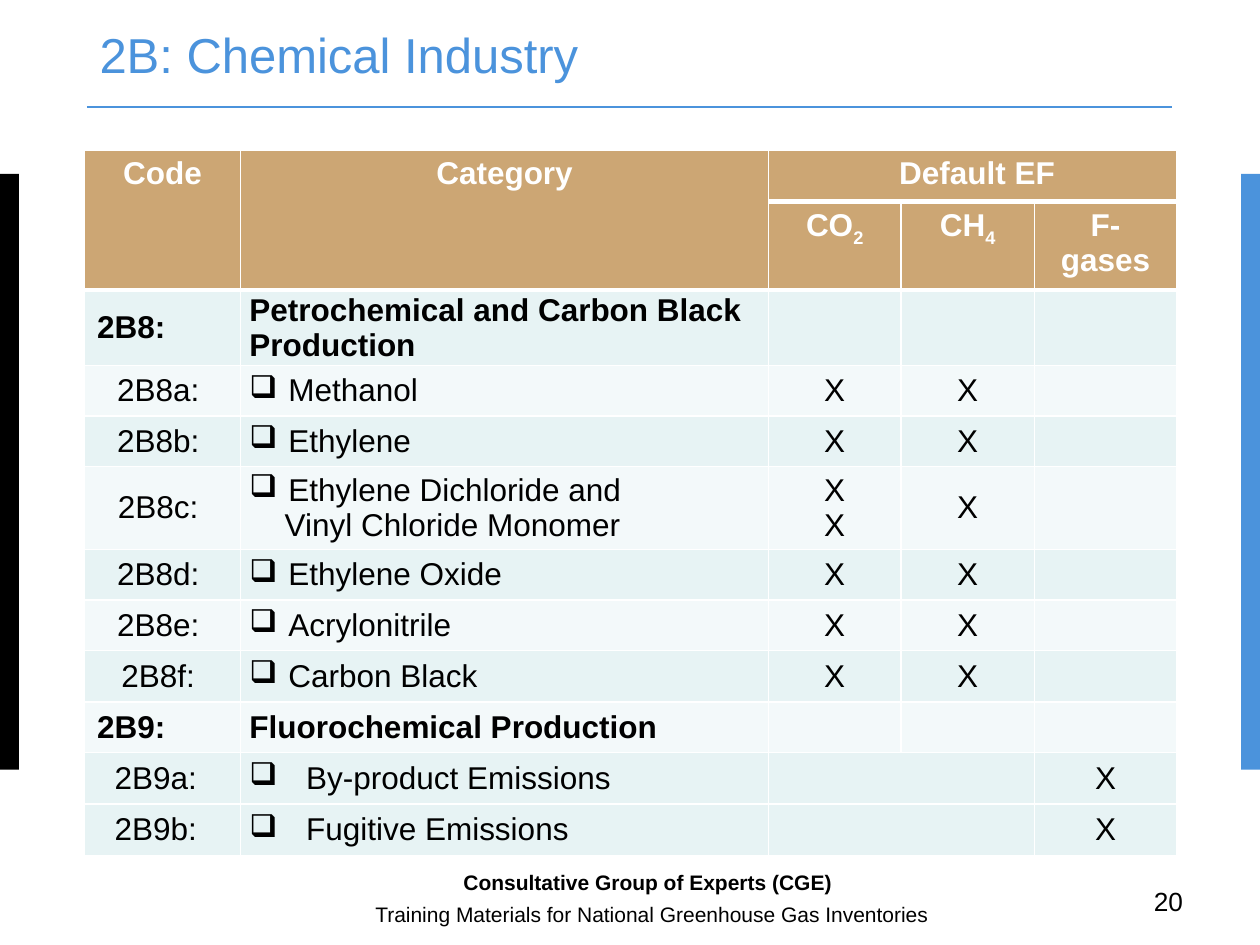
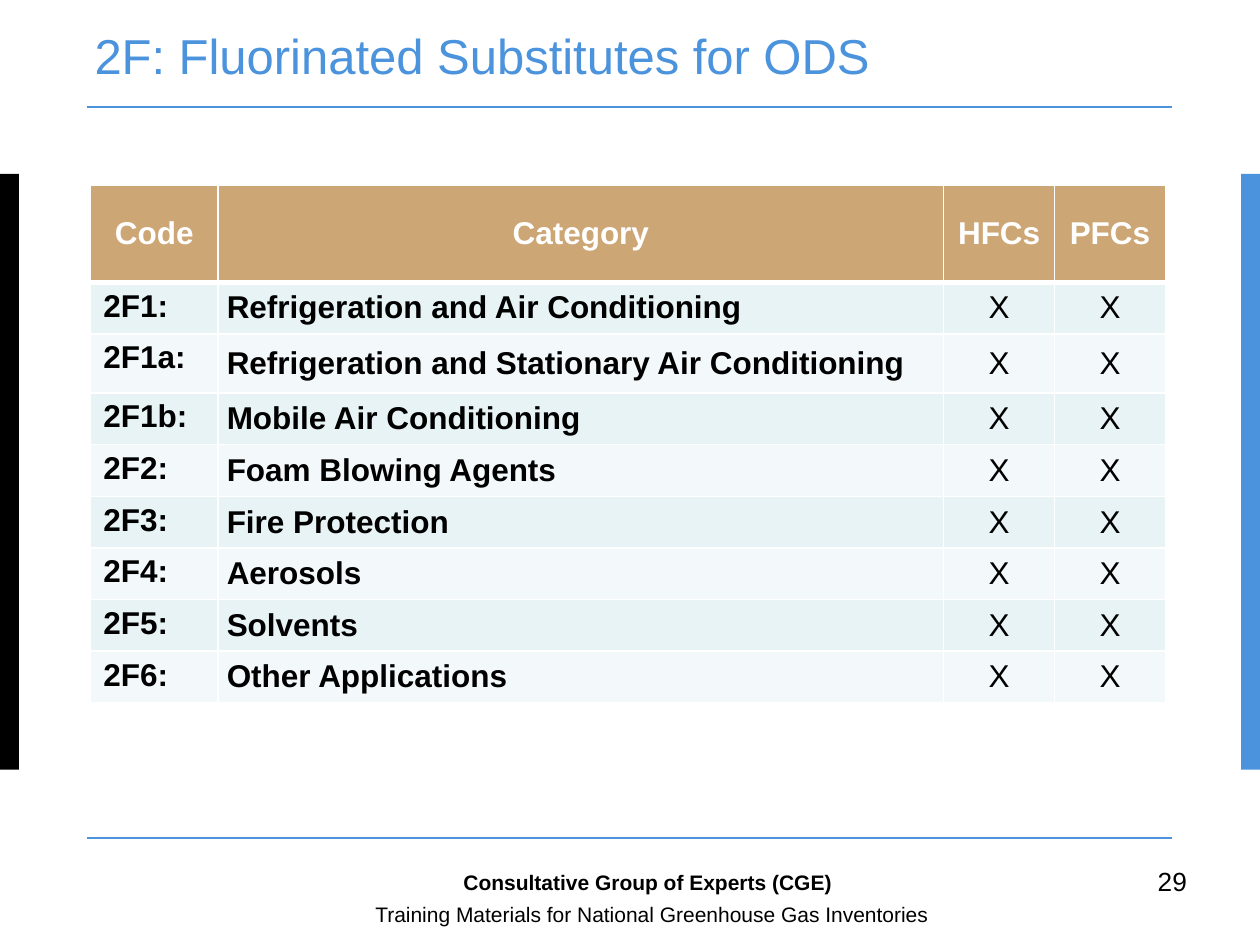
from lxml import etree
from pptx import Presentation
from pptx.dml.color import RGBColor
from pptx.enum.shapes import MSO_CONNECTOR, MSO_SHAPE
from pptx.enum.text import MSO_ANCHOR, PP_ALIGN
from pptx.oxml.ns import qn
from pptx.util import Inches, Pt

RECT, STRAIGHT = MSO_SHAPE.RECTANGLE, MSO_CONNECTOR.STRAIGHT
TOP, MIDDLE = MSO_ANCHOR.TOP, MSO_ANCHOR.MIDDLE
LEFT, CENTER = PP_ALIGN.LEFT, PP_ALIGN.CENTER

FONT = "Arial"
BLACK, WHITE, BLUE, TAN = "000000", "FFFFFF", "4B93DC", "CCA674"
BANDS = ["E7F3F4", "F3F9FA"]
WIDE, TIGHT = (0.1, 0.05, 0.1, 0.05), (0.07, 0, 0.07, 0)  # left, top, right, bottom

SIDE_BARS = [(0, BLACK), (9.85, BLUE)]
RULES = [0.85, 6.65]
FOOTERS = [  # text, box, bold
    ("Training Materials for National Greenhouse Gas Inventories", (2.88, 7.11, 5.72, 0.2), False),
    ("Consultative Group of Experts (CGE)", (3.58, 6.85, 3.39, 0.27), True),
]

CHEMICAL = {
    "title": "2B: Chemical Industry", "title_box": (0.79, 0.28, 8.66, 0.55),
    "number": "20", "number_box": (9.06, 6.98, 0.47, 0.35),
    "left": 0.67, "top": 1.19,
    "cols": [1.24, 4.19, 1.05, 1.06, 1.13],
    "heights": [0.41, 0.66, 0.56, 0.4, 0.38, 0.66, 0.4, 0.38, 0.41, 0.38, 0.41, 0.41],
    "header_anchor": TOP,
    "header": [["Code", "Category", "Default EF", "", ""],
               ["", "", "CO_2", "CH_4", "F-gases"]],
    "merges": [(0, 0, 1, 0), (0, 1, 1, 1), (0, 2, 0, 4), (10, 2, 10, 3), (11, 2, 11, 3)],
    "rows": [
        ("2B8:", "Petrochemical and Carbon Black Production", "", "", ""),
        ("2B8a:", "Methanol", "X", "X", ""),
        ("2B8b:", "Ethylene", "X", "X", ""),
        ("2B8c:", "Ethylene Dichloride and\nVinyl Chloride Monomer", "X\nX", "X", ""),
        ("2B8d:", "Ethylene Oxide", "X", "X", ""),
        ("2B8e:", "Acrylonitrile", "X", "X", ""),
        ("2B8f:", "Carbon Black", "X", "X", ""),
        ("2B9:", "Fluorochemical Production", "", "", ""),
        ("2B9a:", "By-product Emissions", "", "", "X"),
        ("2B9b:", "Fugitive Emissions", "", "", "X"),
    ],
    "bands": [0, 1, 0, 1, 0, 1, 0, 1, 0, 0],
}
SUBSTITUTES = {
    "title": "2F: Fluorinated Substitutes for ODS", "title_box": (0.75, 0.21, 8.51, 0.71),
    "number": "29", "number_box": (9.09, 6.82, 0.47, 0.35),
    "left": 0.72, "top": 1.47,
    "cols": [1.01, 5.76, 0.88, 0.88],
    "heights": [0.77, 0.41, 0.47] + [0.41] * 6,
    "header_anchor": MIDDLE,
    "header": [["Code", "Category", "HFCs", "PFCs"]],
    "merges": [],
    "rows": [(code, category, "X", "X") for code, category in [
        ("2F1:", "Refrigeration and Air Conditioning"),
        ("2F1a:", "Refrigeration and Stationary Air Conditioning"),
        ("2F1b:", "Mobile Air Conditioning"),
        ("2F2:", "Foam Blowing Agents"),
        ("2F3:", "Fire Protection"),
        ("2F4:", "Aerosols"),
        ("2F5:", "Solvents"),
        ("2F6:", "Other Applications"),
    ]],
    "bands": [0, 1] * 4,
}


def rgb(color):
    return RGBColor.from_string(color)


def write(tf, text, size=18, color=BLACK, bold=False, align=LEFT, spacing=None, hang=0):
    """Fill a text frame; "_" starts a subscript, hang gives the first line a bullet."""
    for i, line in enumerate(text.split("\n")):
        p = tf.paragraphs[0] if i == 0 else tf.add_paragraph()
        p.alignment = align
        if spacing:
            p.line_spacing = Pt(spacing)
        if hang:
            pPr = p._p.get_or_add_pPr()
            pPr.set("marL", str(Inches(0.28 if i else hang)))
            pPr.set("indent", str(0 if i else -Inches(hang)))
            if i == 0:
                etree.SubElement(pPr, qn("a:buChar")).set("char", "❑")
        for j, part in enumerate(line.split("_")):
            r = p.add_run()
            r.text = part
            r.font.name, r.font.size, r.font.bold = FONT, Pt(size), bold
            r.font.color.rgb = rgb(color)
            if j:
                r.font._element.set("baseline", "-25000")


def add_text(s, box, text, inset=WIDE, anchor=TOP, **fmt):
    tf = s.shapes.add_textbox(*map(Inches, box)).text_frame
    tf.word_wrap = True
    tf.vertical_anchor = anchor
    tf.margin_left, tf.margin_top, tf.margin_right, tf.margin_bottom = map(Inches, inset)
    write(tf, text, **fmt)


def add_frame(s):
    """Draw the side bars and rules."""
    for x, color in SIDE_BARS:
        sp = s.shapes.add_shape(RECT, *map(Inches, (x, 1.38, 0.15, 4.73)))
        sp.shadow.inherit = False
        sp.fill.solid()
        sp.fill.fore_color.rgb = rgb(color)
        sp.line.fill.background()
    for y in RULES:
        rule = s.shapes.add_connector(STRAIGHT, *map(Inches, (0.69, y, 9.3, y)))
        rule.line.color.rgb = rgb(BLUE)
        rule.line.width = Pt(1)
        etree.SubElement(rule._element.spPr, qn("a:effectLst"))


def style_cell(cell, fill, inset, anchor, top, bottom):
    """Set fill, margins and white borders; top and bottom are border widths."""
    cell.fill.solid()
    cell.fill.fore_color.rgb = rgb(fill)
    cell.vertical_anchor = anchor
    cell.margin_left, cell.margin_top, cell.margin_right, cell.margin_bottom = map(Inches, inset)
    tcPr = cell._tc.get_or_add_tcPr()
    for i, (side, width) in enumerate([("L", 1), ("R", 1), ("T", top), ("B", bottom)]):
        ln = etree.Element(qn("a:ln" + side), w=str(Pt(width)))
        line_fill = etree.SubElement(ln, qn("a:solidFill"))
        etree.SubElement(line_fill, qn("a:srgbClr")).set("val", WHITE)
        tcPr.insert(i, ln)


def header_format(text, anchor):
    inset = {"Default EF": (0.17, 0.05, 0.1, 0.05), "F-gases": (0.13, 0.05, 0.13, 0.05)}
    return inset.get(text, WIDE), anchor, dict(color=WHITE, bold=True, align=CENTER)


def body_format(code, column):
    """Return inset, anchor and text format of a body cell."""
    item = code.startswith("2B") and len(code) == 5
    byproduct = code in ("2B9a:", "2B9b:")
    if column == 0:
        if byproduct:
            return (0.24, 0.05, 0.1, 0.05), MIDDLE, {}
        if item:
            return (0.1, 0.05, 0.17, 0.05), MIDDLE, dict(align=CENTER)
        return WIDE, TOP if code.startswith("2F") else MIDDLE, dict(bold=True)
    if column == 1:
        hang = (0.45 if byproduct else 0.31) if item else 0
        return TIGHT, MIDDLE, dict(bold=not item, hang=hang)
    return TIGHT, MIDDLE, dict(align=CENTER)


def add_category_table(s, data):
    rows = data["header"] + data["rows"]
    heads = len(data["header"])
    size = sum(data["cols"]), sum(data["heights"])
    table = s.shapes.add_table(len(rows), len(data["cols"]), Inches(data["left"]),
                               Inches(data["top"]), *map(Inches, size)).table
    for column, width in zip(table.columns, data["cols"]):
        column.width = Inches(width)
    for row, height in zip(table.rows, data["heights"]):
        row.height = Inches(height)
    for r1, c1, r2, c2 in data["merges"]:
        table.cell(r1, c1).merge(table.cell(r2, c2))
    for i, row in enumerate(rows):
        is_head = i < heads
        fill = TAN if is_head else BANDS[data["bands"][i - heads]]
        top = 3 if 0 < i <= heads else 1
        bottom = 3 if is_head else 1
        for j, text in enumerate(row):
            cell = table.cell(i, j)
            inset, anchor, fmt = (header_format(text, data["header_anchor"]) if is_head
                                  else body_format(row[0], j))
            style_cell(cell, fill, inset, anchor, top, bottom)
            if text:
                write(cell.text_frame, text, **fmt)


def add_slide(prs, data):
    s = prs.slides.add_slide(prs.slide_layouts[6])
    add_frame(s)
    add_text(s, data["title_box"], data["title"], inset=(0, 0, 0, 0), anchor=MIDDLE,
             size=28, color=BLUE, spacing=15)
    add_category_table(s, data)
    add_text(s, data["number_box"], data["number"], size=15)
    for text, box, bold in FOOTERS:
        add_text(s, box, text, size=12, bold=bold)


def main():
    prs = Presentation()
    prs.slide_width, prs.slide_height = Inches(10), Inches(7.5)
    for data in (CHEMICAL, SUBSTITUTES):
        add_slide(prs, data)
    prs.save("out.pptx")


if __name__ == "__main__":
    main()
